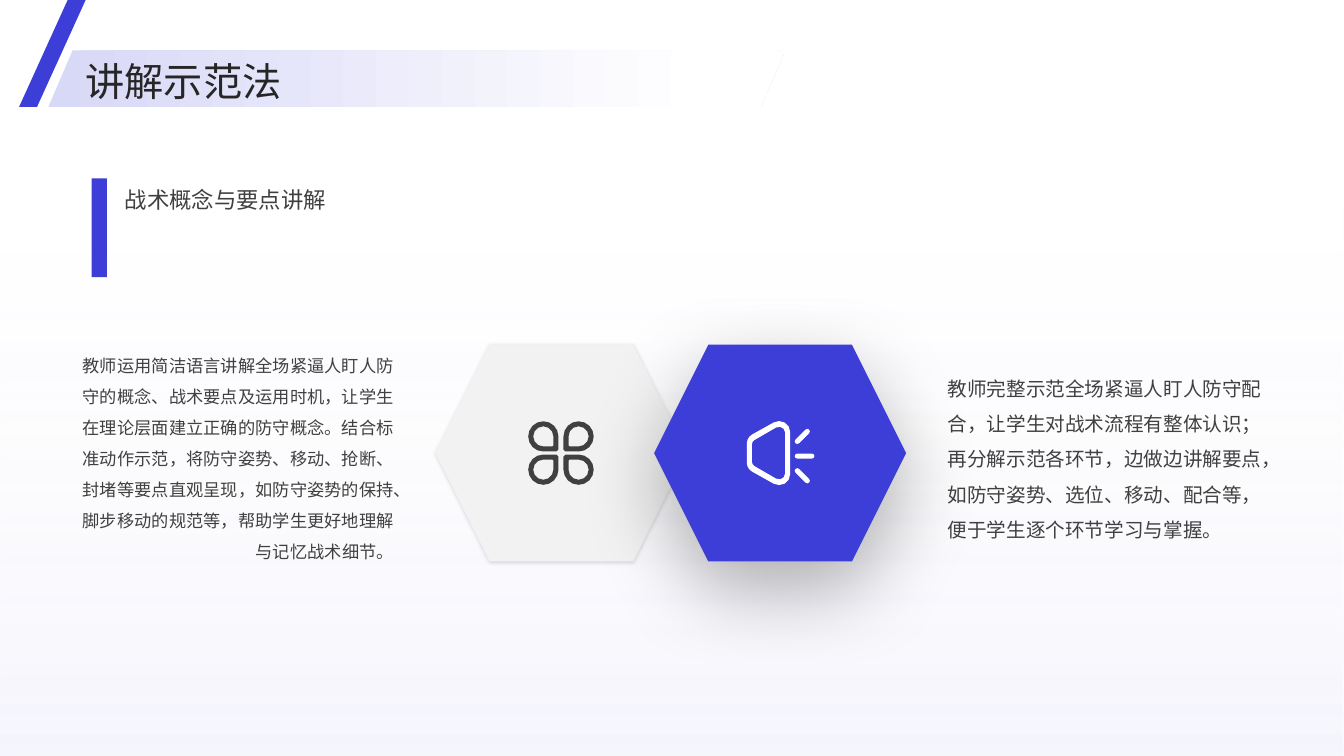
from dataclasses import dataclass
from math import atan2, cos, sin, tan

from lxml import etree
from pptx import Presentation
from pptx.dml.color import RGBColor
from pptx.enum.shapes import MSO_SHAPE
from pptx.enum.text import MSO_ANCHOR, MSO_AUTO_SIZE, PP_ALIGN
from pptx.oxml.ns import qn
from pptx.util import Pt

PX = 9144  # EMU per px, 100 px to the inch
SLIDE_WIDTH, SLIDE_HEIGHT = 12192000, 6858000
ARC_STEP = 7  # px of arc per extra chord

RECT, HEXAGON, SLANT = MSO_SHAPE.RECTANGLE, MSO_SHAPE.HEXAGON, MSO_SHAPE.PARALLELOGRAM
MIDDLE = MSO_ANCHOR.MIDDLE
LEFT, RIGHT = PP_ALIGN.LEFT, PP_ALIGN.RIGHT
FIXED, GROW = MSO_AUTO_SIZE.NONE, MSO_AUTO_SIZE.SHAPE_TO_FIT_TEXT


@dataclass(frozen=True)
class Theme:
    font: str = "Noto Sans CJK SC"
    accent: str = "3D3ED7"
    tint: str = "D8D8F7"
    white: str = "FFFFFF"
    pale: str = "F2F2F2"
    body: str = "404040"
    title: str = "262626"
    black: str = "000000"
    title_size: float = 28
    heading_size: float = 16
    demo_size: float = 14
    lecture_size: float = 12.3


THEME = Theme()


@dataclass(frozen=True)
class Box:
    x: int
    y: int
    w: int
    h: int


@dataclass(frozen=True)
class Stop:
    position: float
    color: str
    alpha: int = 100


@dataclass(frozen=True)
class Shadow:
    alpha: int
    blur: int
    distance: int


@dataclass(frozen=True)
class Label:
    box: Box
    text: str
    size: float
    color: str = THEME.body
    align: PP_ALIGN = LEFT
    spacing: float = 1.5
    inset: int = 0
    auto_size: MSO_AUTO_SIZE = FIXED


@dataclass(frozen=True)
class Corner:
    point: complex
    radius: float


Outline = list[Corner]


@dataclass(frozen=True)
class Tile:
    box: Box
    fill: str
    shadow: Shadow
    icon: list[Outline]
    icon_x: int
    icon_y: int
    icon_color: str


def petal(center: complex, side: complex, radius: int, tip_radius: int) -> Outline:
    """A rounded square whose tight corner points along side (±1±1j)."""
    return [Corner(center + radius * side * 1j**k, radius if k else tip_radius) for k in range(4)]


def horn(right: int, left: int, top: int, shoulder: int, radii: tuple[int, int]) -> Outline:
    """The megaphone body, mirrored about its horizontal axis at y = 31.5."""
    upper = [Corner(complex(left, shoulder), radii[0]), Corner(complex(right, top), radii[1])]
    lower = [Corner(c.point.conjugate() + 63j, c.radius) for c in reversed(upper)]
    return upper + lower


def ray(start: complex, end: complex) -> Outline:
    along = (end - start) / abs(end - start) * 2.5
    across = along * 1j
    points = (start - along - across, end + along - across,
              end + along + across, start - along + across)
    return [Corner(p, 2.5) for p in points]


CLOVER = [petal(complex(x, y), complex(sx, sy), radius, tip)
          for x, sx in ((15, 1), (50, -1))
          for y, sy in ((15, 1), (48, -1))
          for radius, tip in ((15, 2), (10, 1))]
MEGAPHONE = [horn(43, 0, -8, 16, (10, 11)), horn(38, 5, 1, 20, (5, 6)),
             ray(50 + 20j, 60 + 10j), ray(50 + 34.5j, 64.5 + 34.5j), ray(50 + 49j, 60 + 59j)]

TILES = [
    Tile(Box(432, 342, 250, 215), THEME.pale, Shadow(15, 3, 1), CLOVER, 524, 418, THEME.body),
    Tile(Box(649, 342, 250, 215), THEME.accent, Shadow(30, 60, 20), MEGAPHONE, 741, 418, THEME.white),
]
DEMO = Label(
    Box(940, 332, 314, 235),
    "教师完整示范全场紧逼人盯人防守配合，让学生对战术流程有整体认识；再分解示范各环节，"
    "边做边讲解要点，如防守姿势、选位、移动、配合等，便于学生逐个环节学习与掌握。",
    THEME.demo_size, inset=4)
LECTURE = Label(
    Box(81, 332, 310, 236),
    "教师运用简洁语言讲解全场紧逼人盯人防守的概念、战术要点及运用时机，让学生在理论层面建立"
    "正确的防守概念。结合标准动作示范，将防守姿势、移动、抢断、封堵等要点直观呈现，"
    "如防守姿势的保持、脚步移动的规范等，帮助学生更好地理解与记忆战术细节。",
    THEME.lecture_size, align=RIGHT, inset=4)
HEADING = Label(Box(124, 175, 1044, 33), "战术概念与要点讲解", THEME.heading_size, auto_size=GROW)
TITLE = Label(Box(85, 52, 1175, 51), "讲解示范法", THEME.title_size, THEME.title, spacing=1.1)


def emu(box: Box) -> tuple[int, ...]:
    return tuple(v * PX for v in (box.x, box.y, box.w, box.h))


def paint(sp, color: str) -> None:
    sp.shadow.inherit = False
    sp.fill.solid()
    sp.fill.fore_color.rgb = RGBColor.from_string(color)
    sp.line.fill.background()


def add_block(shapes, kind: MSO_SHAPE, box: Box, color: str, slant: float | None = None):
    sp = shapes.add_shape(kind, *emu(box))
    paint(sp, color)
    if slant is not None:
        sp.adjustments[0] = slant
    return sp


def set_gradient(sp, stops: tuple[Stop, Stop], angle: int) -> None:
    sp.fill.gradient()
    sp.fill.gradient_angle = angle
    for gs, stop in zip(sp.fill.gradient_stops, stops):
        gs.position = stop.position
        gs.color.rgb = RGBColor.from_string(stop.color)
    for clr, stop in zip(sp.element.spPr.iter(qn("a:srgbClr")), stops):
        if stop.alpha < 100:
            etree.SubElement(clr, qn("a:alpha"), val=str(stop.alpha * 1000))


def set_shadow(sp, shadow: Shadow) -> None:
    effects = sp.element.spPr.find(qn("a:effectLst"))
    outer = etree.SubElement(effects, qn("a:outerShdw"), blurRad=str(Pt(shadow.blur)),
                             dist=str(Pt(shadow.distance)), dir="5400000",
                             algn="t", rotWithShape="0")
    clr = etree.SubElement(outer, qn("a:srgbClr"), val=THEME.black)
    etree.SubElement(clr, qn("a:alpha"), val=str(shadow.alpha * 1000))


def rounded_points(outline: Outline) -> list[tuple[int, int]]:
    """Points in EMU along the outline, each corner replaced by a few chords."""
    points = []
    for i, corner in enumerate(outline):
        p, r = corner.point, corner.radius
        back = outline[i - 1].point - p
        ahead = outline[(i + 1) % len(outline)].point - p
        back, ahead = back / abs(back), ahead / abs(ahead)
        turn = ahead / back
        half = abs(atan2(turn.imag, turn.real)) / 2
        center = p + (back + ahead) / abs(back + ahead) * r / sin(half)
        spoke = p + back * r / tan(half) - center
        swing = (p + ahead * r / tan(half) - center) / spoke
        sweep = atan2(swing.imag, swing.real)
        steps = 1 + round(abs(sweep) * r / ARC_STEP)
        for k in range(steps + 1):
            a = sweep * k / steps
            point = (center + spoke * complex(cos(a), sin(a))) * PX
            points.append((round(point.real), round(point.imag)))
    return list(dict.fromkeys(points))


def add_icon(shapes, tile: Tile) -> None:
    first, *others = [rounded_points(outline) for outline in tile.icon]
    builder = shapes.build_freeform(*first[0])
    builder.add_line_segments(first[1:], close=True)
    for points in others:
        builder.move_to(*points[0])
        builder.add_line_segments(points[1:], close=True)
    paint(builder.convert_to_shape(tile.icon_x * PX, tile.icon_y * PX), tile.icon_color)


def add_label(shapes, label: Label) -> None:
    sp = shapes.add_textbox(*emu(label.box))
    tf = sp.text_frame
    tf.word_wrap = True
    tf.auto_size = label.auto_size
    tf.vertical_anchor = MIDDLE
    tf.margin_left = tf.margin_right = 0
    tf.margin_top = tf.margin_bottom = label.inset * PX
    p = tf.paragraphs[0]
    p.text = label.text
    p.alignment = label.align
    p.line_spacing = label.spacing
    p.font.size = Pt(label.size)
    p.font.color.rgb = RGBColor.from_string(label.color)
    p.font.name = THEME.font
    for props in sp.element.iter(qn("a:defRPr")):
        etree.SubElement(props, qn("a:ea"), typeface=THEME.font)


def main() -> None:
    prs = Presentation()
    prs.slide_width, prs.slide_height = SLIDE_WIDTH, SLIDE_HEIGHT
    shapes = prs.slides.add_slide(prs.slide_layouts[6]).shapes

    backdrop = add_block(shapes, RECT, Box(0, 0, 1333, 750), THEME.white)
    set_gradient(backdrop, (Stop(0, THEME.tint, 25), Stop(0.85, THEME.white, 0)), 90)
    add_label(shapes, DEMO)
    add_label(shapes, LECTURE)
    for tile in TILES:
        set_shadow(add_block(shapes, HEXAGON, tile.box, tile.fill), tile.shadow)
        add_icon(shapes, tile)
    add_label(shapes, HEADING)
    add_block(shapes, RECT, Box(91, 177, 15, 98), THEME.accent)
    banner = add_block(shapes, SLANT, Box(48, 50, 731, 56), THEME.tint, 0.43)
    set_gradient(banner, (Stop(0, THEME.tint), Stop(0.89, THEME.white)), 0)
    add_label(shapes, TITLE)
    add_block(shapes, SLANT, Box(19, 0, 66, 106), THEME.accent, 0.73)

    prs.save("out.pptx")


if __name__ == "__main__":
    main()
